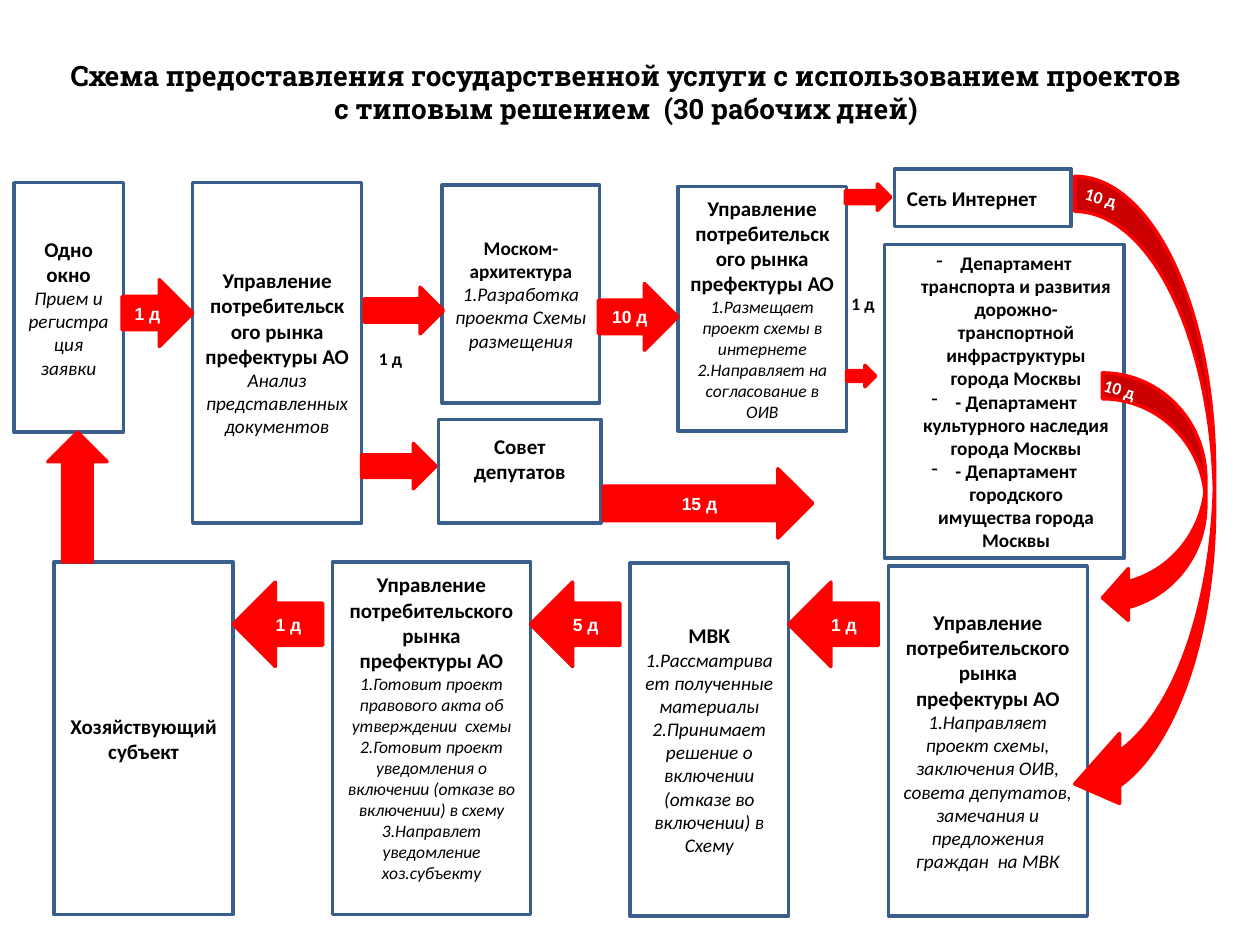
from lxml import etree
from pptx import Presentation
from pptx.dml.color import RGBColor
from pptx.enum.shapes import MSO_SHAPE
from pptx.enum.text import MSO_ANCHOR, PP_ALIGN
from pptx.oxml.ns import qn
from pptx.util import Inches, Pt

RECT = MSO_SHAPE.RECTANGLE
RIGHT, LEFT, UP = MSO_SHAPE.RIGHT_ARROW, MSO_SHAPE.LEFT_ARROW, MSO_SHAPE.UP_ARROW
CURVED = MSO_SHAPE.CURVED_LEFT_ARROW
MIDDLE, TOP = MSO_ANCHOR.MIDDLE, MSO_ANCHOR.TOP
CENTER, START = PP_ALIGN.CENTER, PP_ALIGN.LEFT
BLACK, WHITE, RED, BLUE = "000000", "FFFFFF", "FF0000", "3A5F8C"
OFFICE = "Управление потребительского рынка префектуры АО"


def color(value):
    return RGBColor.from_string(value)


class Scheme:
    """Holds the slide and draws the boxes, arrows and labels of the scheme."""

    def __init__(self, slide):
        self.s = slide

    def add_text(self, tf, text, first=False, size=12, font="Calibri", fill=BLACK,
                 bold=True, italic=False, align=CENTER, bullet=None):
        p = tf.paragraphs[0] if first else tf.add_paragraph()
        p.alignment = align
        if bullet:
            pPr = p._p.get_or_add_pPr()
            pPr.set("marL", str(Inches(0.19)))
            pPr.set("indent", str(-Inches(0.19)))
            etree.SubElement(pPr, qn("a:buChar")).set("char", bullet)
        r = p.add_run()
        r.text = text
        r.font.size, r.font.name = Pt(size), font
        r.font.bold, r.font.italic = bold, italic
        r.font.color.rgb = color(fill)

    def shape(self, kind, at, fill, line):
        sp = self.s.shapes.add_shape(kind, *map(Inches, at))
        sp.shadow.inherit = False
        sp.fill.solid()
        sp.fill.fore_color.rgb = color(fill)
        sp.line.color.rgb = color(line)
        sp.line.width = Pt(2)
        sp.text_frame.word_wrap = True
        sp.text_frame.vertical_anchor = MIDDLE
        return sp

    def box(self, at, heads, body=(), size=12, body_size=11, bottom=0.05, **fmt):
        tf = self.shape(RECT, at, WHITE, BLUE).text_frame
        tf.margin_bottom = Inches(bottom)
        for i, text in enumerate(heads):
            self.add_text(tf, text, first=i == 0, size=size, **fmt)
        for text in body:
            self.add_text(tf, text, size=body_size, bold=False, italic=True)

    def arrow(self, kind, at, text=None, align=CENTER, adj=()):
        sp = self.shape(kind, at, RED, RED)
        for i, value in enumerate(adj):
            sp.adjustments[i] = value
        if text:
            self.add_text(sp.text_frame, text, first=True, size=10, font="Arial",
                          fill=WHITE, align=align)

    def label(self, at, text, anchor=TOP, rotation=0, **fmt):
        sp = self.s.shapes.add_textbox(*map(Inches, at))
        sp.rotation = rotation
        tf = sp.text_frame
        tf.word_wrap = True
        tf.vertical_anchor = anchor
        self.add_text(tf, text, first=True, **fmt)


def main():
    prs = Presentation()
    prs.slide_width, prs.slide_height = Inches(10), Inches(7.5)
    d = Scheme(prs.slides.add_slide(prs.slide_layouts[6]))

    d.label((0.44, 0.34, 9.06, 0.78),
            "Схема предоставления государственной услуги с использованием "
            "проектов с типовым решением  (30 рабочих дней)",
            anchor=MIDDLE, size=16, font="Roboto Slab")

    d.box((0.11, 1.45, 0.87, 1.98), ["Одно окно"], ["Прием и регистрация заявки"])
    d.box((1.53, 1.45, 1.34, 2.7), [OFFICE], ["Анализ представленных документов"])
    d.box((3.51, 1.47, 1.25, 1.73), ["Моском- архитектура"],
          ["1.Разработка проекта Схемы размещения"], size=11)
    d.box((5.38, 1.48, 1.34, 1.94), [OFFICE],
          ["1.Размещает проект схемы в интернете",
           "2.Направляет на согласование в ОИВ"], body_size=10)
    d.box((7.1, 1.34, 1.4, 0.46), ["Сеть Интернет"], align=START)
    d.box((7.02, 1.94, 1.9, 2.49),
          ["Департамент транспорта и развития дорожно-транспортной "
           "инфраструктуры города Москвы",
           "- Департамент культурного наследия города Москвы",
           "- Департамент городского имущества города Москвы"],
          size=11, bullet="-")
    d.box((3.48, 3.33, 1.29, 0.82), ["Совет депутатов"], bottom=0.25)
    d.box((7.05, 4.49, 1.58, 2.78), [OFFICE],
          ["1.Направляет проект схемы, заключения ОИВ, совета депутатов, "
           "замечания и предложения граждан  на МВК"])
    d.box((2.64, 4.46, 1.57, 2.8), [OFFICE],
          ["1.Готовит проект правового акта об утверждении  схемы",
           "2.Готовит проект уведомления о включении (отказе во включении) в схему",
           "3.Направлет уведомление хоз.субъекту"], body_size=10, bottom=0.22)
    d.box((5, 4.47, 1.26, 2.8), ["МВК"],
          ["1.Рассматривает полученные материалы",
           "2.Принимает решение о включении (отказе во включении) в Схему"])
    d.box((0.43, 4.46, 1.42, 2.8), ["Хозяйствующий субъект"])

    d.arrow(RIGHT, (0.97, 2.22, 0.56, 0.53), "1 д", align=START)
    d.arrow(RIGHT, (4.75, 2.25, 0.63, 0.53), "10 д")
    d.arrow(RIGHT, (4.79, 3.72, 1.66, 0.55), "15 д")
    for at in ((2.89, 2.28, 0.63, 0.37), (2.87, 3.52, 0.59, 0.36),
               (6.71, 1.46, 0.36, 0.21), (6.72, 2.9, 0.23, 0.17)):
        d.arrow(RIGHT, at)
    for x, text in ((6.26, "1 д"), (4.21, "5 д"), (1.85, "1 д")):
        d.arrow(LEFT, (x, 4.62, 0.71, 0.67), text)
    d.arrow(UP, (0.38, 3.43, 0.47, 1.03))
    d.arrow(CURVED, (8.53, 1.4, 1.11, 5.1), adj=(0.25, 0.5, 0.32))
    d.arrow(CURVED, (8.75, 2.96, 0.82, 1.99))

    for x, y in ((8.51, 1.46), (8.66, 2.98)):
        d.label((x, y, 0.63, 0.27), "10 д", rotation=16.3, size=10,
                fill=WHITE, align=START)
    for x, y in ((6.66, 2.28), (2.91, 2.71)):
        d.label((x, y, 0.47, 0.27), "1 д", size=10, align=START)

    prs.save("out.pptx")


if __name__ == "__main__":
    main()
